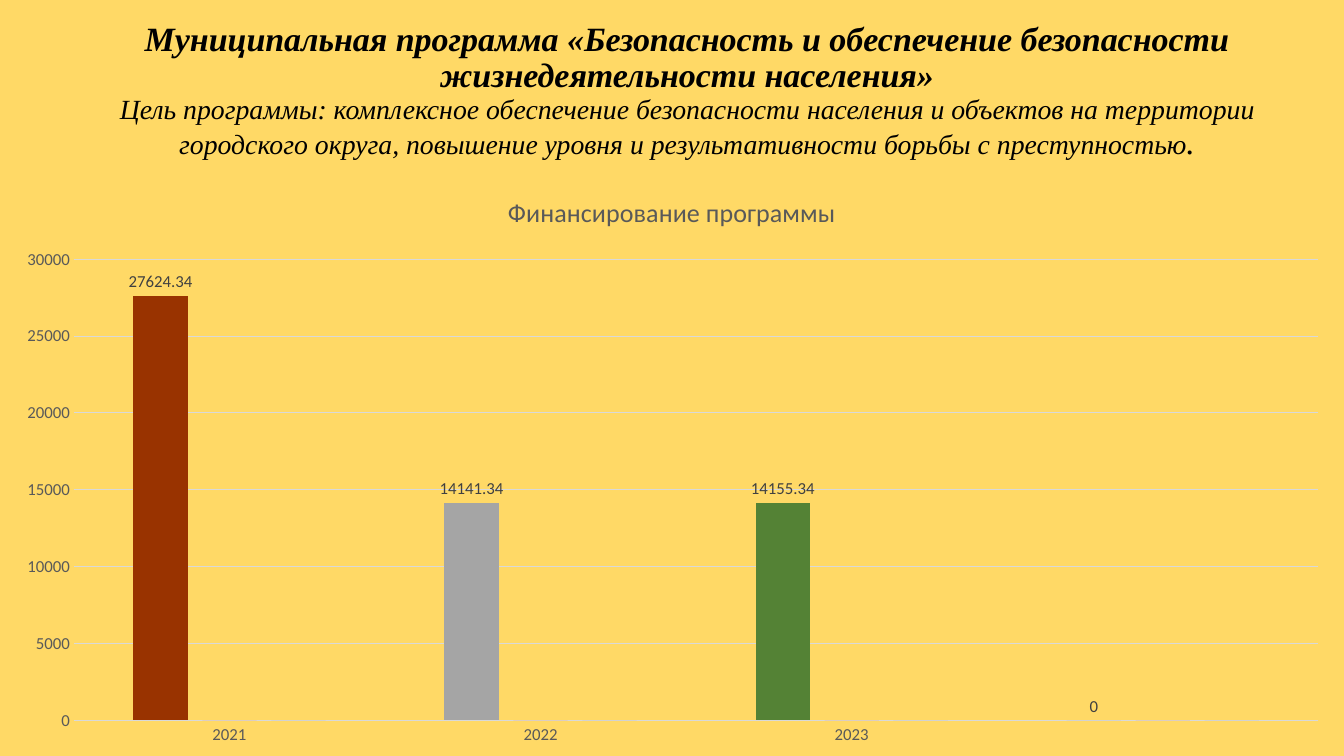
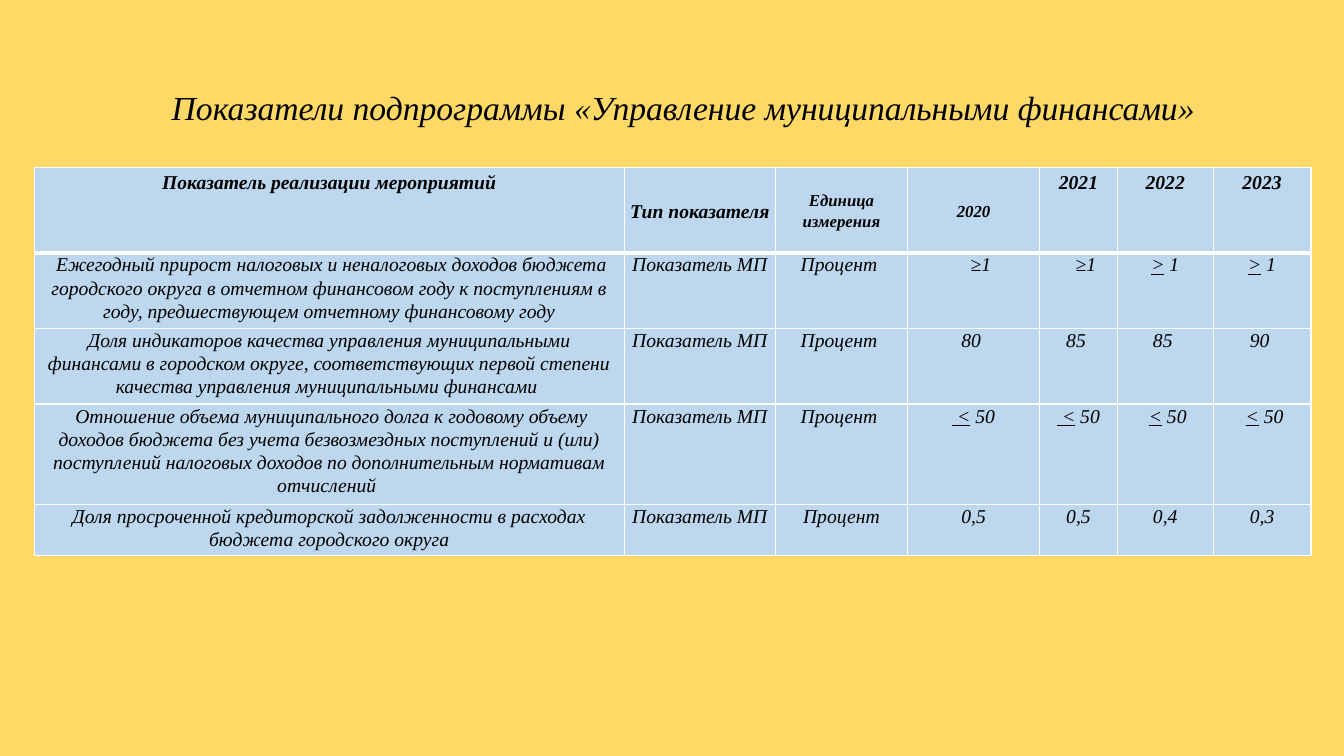
from dataclasses import dataclass

import lxml.etree
import pptx
import pptx.chart.data
import pptx.dml.color
import pptx.enum.chart
import pptx.enum.text
import pptx.oxml.ns
import pptx.util

Pt = pptx.util.Pt
qn = pptx.oxml.ns.qn
WIDE = pptx.util.Inches(13.33)
HIGH = pptx.util.Inches(7.5)
MIDDLE = pptx.enum.text.MSO_ANCHOR.MIDDLE
TOP = pptx.enum.text.MSO_ANCHOR.TOP


@dataclass(frozen=True)
class Theme:
    back: str = "FFD966"
    ink: str = "000000"
    cell: str = "BDD7EE"
    edge: str = "FFFFFF"
    grid: str = "D9D9D9"
    axis: str = "595959"
    label: str = "404040"
    bars: tuple[str, ...] = ("A5A5A5", "ED7D31", "A5A5A5")
    points: tuple[tuple[int, str], ...] = ((0, "993300"), (2, "548235"))
    serif: str = "Times New Roman"
    sans: str = "Calibri"
    head: float = 24.3
    goal: float = 19.8
    name: float = 24
    body: float = 14
    small: float = 12
    chart: float = 18.6


THEME = Theme()


@dataclass(frozen=True)
class Box:
    left: float
    top: float
    width: float
    height: float

    def place(self) -> tuple[int, int, int, int]:
        return across(self.left), down(self.top), across(self.width), down(self.height)


@dataclass(frozen=True)
class Run:
    text: str
    size: float = THEME.body
    bold: bool = False
    under: bool = False
    split: bool = False


@dataclass(frozen=True)
class Style:
    side: float
    edge: float
    space: float
    anchor: pptx.enum.text.MSO_ANCHOR = TOP


@dataclass(frozen=True)
class Cell:
    runs: tuple[Run, ...]
    style: Style
    shift: float = 0


PLAIN = Style(7.2, 3.6, 1)
TIGHT = Style(3, 5, 1.15, MIDDLE)
BODY = Style(5, 0, 1.07)


def across(share: float) -> int:
    return round(WIDE * share / 100)


def down(share: float) -> int:
    return round(HIGH * share / 100)


def color(code: str) -> pptx.dml.color.RGBColor:
    return pptx.dml.color.RGBColor.from_string(code)


def write(frame, runs: tuple[Run, ...], space: float) -> None:
    line = frame.paragraphs[0]
    line.alignment = pptx.enum.text.PP_ALIGN.CENTER
    line.line_spacing = space
    for part in runs:
        run = line.add_run()
        run.text = part.text
        font = run.font
        font.name, font.size = THEME.serif, Pt(part.size)
        font.bold, font.italic, font.underline = part.bold, True, part.under
        font.color.rgb = color(THEME.ink)
        if part.split:
            line.add_line_break()


def add_slide(deck):
    slide = deck.slides.add_slide(deck.slide_layouts[6])
    slide.background.fill.solid()
    slide.background.fill.fore_color.rgb = color(THEME.back)
    return slide


def add_title(slide, box: Box, *runs: Run) -> None:
    frame = slide.shapes.add_textbox(*box.place()).text_frame
    frame.word_wrap = True
    frame.vertical_anchor = MIDDLE
    frame.margin_top = frame.margin_bottom = 0
    write(frame, runs, 0.9)


def set_font(font, size: float, code: str) -> None:
    font.name, font.size, font.bold = THEME.sans, Pt(size), False
    font.color.rgb = color(code)


def set_line(line) -> None:
    line.color.rgb = color(THEME.grid)
    line.width = Pt(0.75)


def fix_plot(chart, box: Box) -> None:
    area = chart._chartSpace.chart.plotArea
    for old in area.findall(qn("c:layout")):
        area.remove(old)
    layout = lxml.etree.Element(qn("c:layout"))
    area.insert(0, layout)
    manual = lxml.etree.SubElement(layout, qn("c:manualLayout"))
    rules = (("layoutTarget", "inner"), ("xMode", "edge"), ("yMode", "edge"),
             ("x", box.left / 100), ("y", box.top / 100),
             ("w", box.width / 100), ("h", box.height / 100))
    for tag, value in rules:
        lxml.etree.SubElement(manual, qn(f"c:{tag}")).set("val", str(value))


def add_chart(slide, box: Box, title: str, names: tuple[str, ...],
              rows: tuple[tuple[float, ...], ...]) -> None:
    data = pptx.chart.data.CategoryChartData()
    data.categories = names
    for index, row in enumerate(rows, 1):
        data.add_series(f"Series {index}", row)
    kind = pptx.enum.chart.XL_CHART_TYPE.COLUMN_CLUSTERED
    chart = slide.shapes.add_chart(kind, *box.place(), data).chart
    set_font(chart.font, 10, THEME.ink)
    chart.has_legend = False
    chart.has_title = True
    run = chart.chart_title.text_frame.paragraphs[0].add_run()
    run.text = title
    set_font(run.font, THEME.chart, THEME.axis)
    for axis in (chart.category_axis, chart.value_axis):
        axis.major_tick_mark = axis.minor_tick_mark = pptx.enum.chart.XL_TICK_MARK.NONE
        set_font(axis.tick_labels.font, THEME.small, THEME.axis)
    set_line(chart.category_axis.format.line)
    axis.format.line.fill.background()
    axis.has_major_gridlines = True
    set_line(axis.major_gridlines.format.line)
    axis.minimum_scale, axis.maximum_scale, axis.major_unit = 0, 30000, 5000
    plot = chart.plots[0]
    plot.gap_width, plot.overlap, plot.vary_by_categories = 219, -27, False
    for bars, code in zip(plot.series, THEME.bars):
        bars.format.fill.solid()
        bars.format.fill.fore_color.rgb = color(code)
    first = plot.series[0]
    for index, code in THEME.points:
        fill = first.points[index].format.fill
        fill.solid()
        fill.fore_color.rgb = color(code)
    labels = first.data_labels
    labels.show_value = True
    labels.position = pptx.enum.chart.XL_LABEL_POSITION.OUTSIDE_END
    set_font(labels.font, THEME.small, THEME.label)
    fix_plot(chart, Box(5.5, 14.9, 92.6, 79))


def add_edges(cell, above: float, below: float) -> None:
    props = cell._tc.get_or_add_tcPr()
    for index, (side, width) in enumerate((("L", 1), ("R", 1), ("T", above), ("B", below))):
        line = lxml.etree.Element(qn(f"a:ln{side}"), w=str(Pt(width)))
        fill = lxml.etree.SubElement(line, qn("a:solidFill"))
        lxml.etree.SubElement(fill, qn("a:srgbClr")).set("val", THEME.edge)
        props.insert(index, line)


def fill_cell(cell, data: Cell, row: int) -> None:
    style = data.style
    cell.margin_left, cell.margin_right = Pt(style.side + data.shift), Pt(style.side)
    cell.margin_top = cell.margin_bottom = Pt(style.edge)
    cell.vertical_anchor = style.anchor
    cell.fill.solid()
    cell.fill.fore_color.rgb = color(THEME.cell)
    add_edges(cell, 3 if row == 1 else 1, 3 if row == 0 else 1)
    write(cell.text_frame, data.runs, style.space)


def add_table(slide, left: float, top: float, cols: tuple[float, ...],
              highs: tuple[float, ...], rows: list[list[Cell]]) -> None:
    box = Box(left, top, sum(cols), sum(highs))
    table = slide.shapes.add_table(len(highs), len(cols), *box.place()).table
    for col, width in zip(table.columns, cols):
        col.width = across(width)
    for index, (row, high) in enumerate(zip(rows, highs)):
        table.rows[index].height = down(high)
        for spot, data in enumerate(row):
            fill_cell(table.cell(index, spot), data, index)


def head(text: str, style: Style = PLAIN, size: float = THEME.body) -> Cell:
    return Cell((Run(text, size, bold=True),), style)


def body(text: str, shift: float = 0) -> Cell:
    return Cell((Run(text),), BODY, shift)


def bound(sign: str, value: str, lead: str = "") -> Cell:
    runs = (Run(sign, under=True), Run(value))
    return Cell(((Run(lead),) if lead else ()) + runs, BODY)


def make_funds(deck) -> None:
    slide = add_slide(deck)
    add_title(
        slide, Box(5.1, 3.07, 92.05, 18.13),
        Run("Муниципальная программа «Безопасность и обеспечение безопасности "
            "жизнедеятельности населения»", THEME.head, bold=True, split=True),
        Run("Цель программы: комплексное обеспечение безопасности населения и объектов "
            "на территории городского округа, повышение уровня и результативности "
            "борьбы с преступностью", THEME.goal),
        Run(".", THEME.head))
    add_chart(slide, Box(0, 22.8, 100, 77.2), "Финансирование программы",
              ("2021", "2022", "2023", " "),
              ((27624.34, 14141.34, 14155.34, 0), (0,) * 4, (0,) * 4))


def make_goals(deck) -> None:
    slide = add_slide(deck)
    add_title(slide, Box(5.55, 8.93, 90.55, 11.07),
              Run("Показатели подпрограммы «Управление муниципальными финансами»", THEME.name))
    rows = [
        [head("Показатель реализации мероприятий"), head("Тип показателя", TIGHT),
         head("Единица измерения", TIGHT, THEME.small), head("2020", TIGHT, THEME.small),
         *map(head, ("2021", "2022", "2023"))],
        [body(" Ежегодный прирост налоговых и неналоговых доходов бюджета городского округа "
              "в отчетном финансовом году к поступлениям в году, предшествующем отчетному "
              "финансовому году"),
         body("Показатель МП"), body("Процент "),
         *[body("≥1", 10.5)] * 2, *[bound(">", " 1")] * 2],
        [body("Доля индикаторов качества управления муниципальными финансами в городском "
              "округе, соответствующих первой степени качества управления муниципальными "
              "финансами "),
         *map(body, ("Показатель МП ", "Процент ", "80 ", "85 ", "85 ", "90 "))],
        [body(" Отношение объема муниципального долга к годовому объему доходов бюджета "
              "без учета безвозмездных поступлений и (или) поступлений налоговых доходов "
              "по дополнительным нормативам отчислений "),
         body("Показатель МП "), body("Процент "),
         *[bound(" <", " 50")] * 2, *[bound("<", " 50", " ")] * 2],
        [body("Доля просроченной кредиторской задолженности в расходах бюджета "
              "городского округа"),
         *map(body, ("Показатель МП", "Процент", "0,5", "0,5", "0,4", "0,3"))],
    ]
    add_table(slide, 2.55, 22.13, (43.9, 11.25, 9.83, 9.83, 5.78, 7.13, 7.28),
              (11.33, 10, 9.47, 12.27, 6.13), rows)


def main() -> None:
    deck = pptx.Presentation()
    deck.slide_width, deck.slide_height = WIDE, HIGH
    make_funds(deck)
    make_goals(deck)
    deck.save("out.pptx")


if __name__ == "__main__":
    main()
